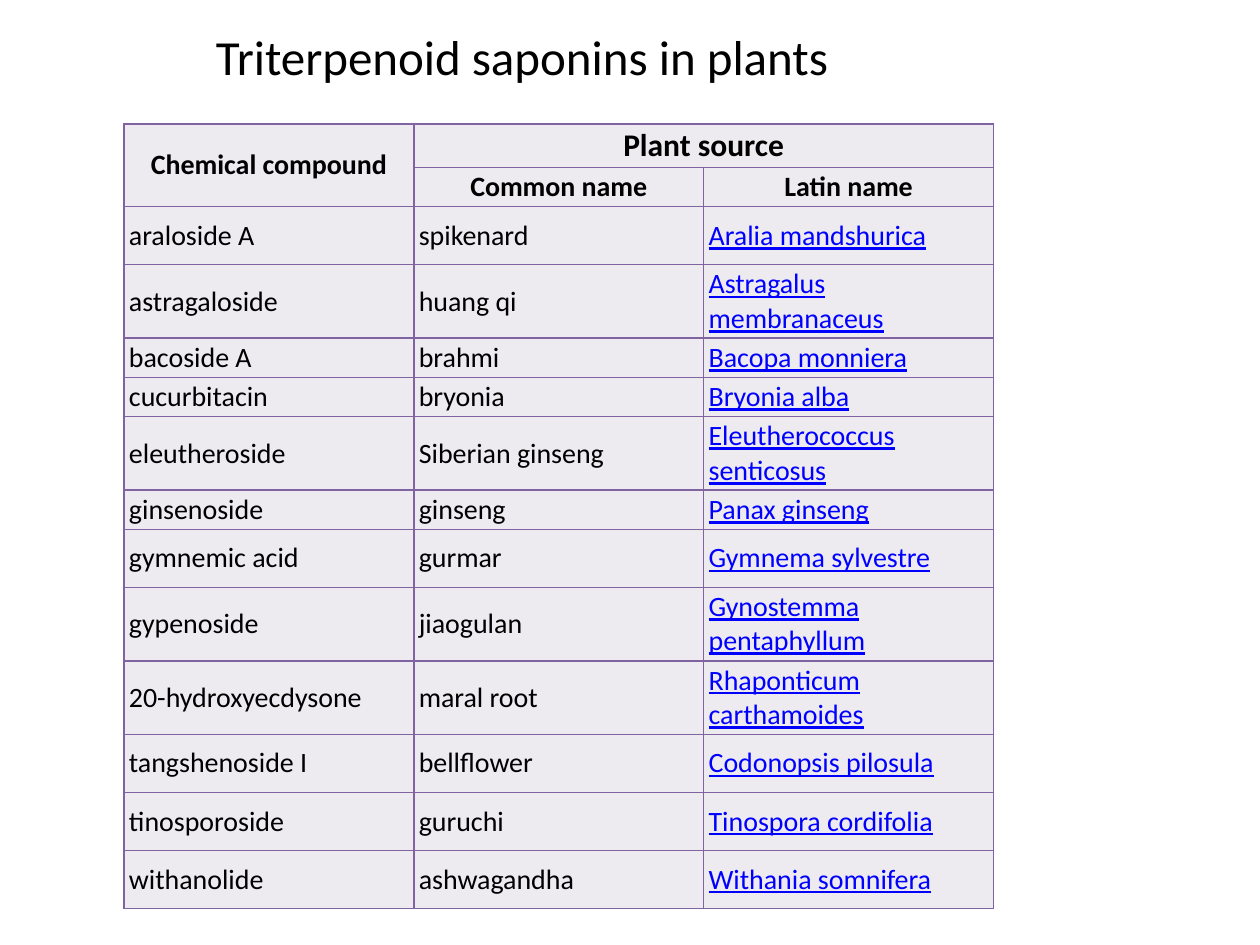
import dataclasses

import lxml.etree
import pptx
import pptx.dml.color
import pptx.enum.text
import pptx.oxml.ns
import pptx.util
from pptx.util import Cm, Pt

RGB = pptx.dml.color.RGBColor.from_string
ALIGN = pptx.enum.text.PP_ALIGN
ANCHOR = pptx.enum.text.MSO_ANCHOR


@dataclasses.dataclass(frozen=True)
class Theme:
    font: str = "Calibri"
    text: str = "000000"
    latin: str = "0000FF"
    fill: str = "EDEAF0"
    border: str = "8064A2"
    border_width: int = Pt(1)
    title_size: int = Pt(28)
    group_size: int = Pt(18)
    body_size: int = Pt(16)


THEME = Theme()

HEADERS = [
    ("Chemical compound", "Plant source", ""),
    ("", "Common name", "Latin name"),
]
PLANTS = [
    ("araloside A", "spikenard", "Aralia mandshurica"),
    ("astragaloside", "huang qi", "Astragalus membranaceus"),
    ("bacoside A", "brahmi", "Bacopa monniera"),
    ("cucurbitacin", "bryonia", "Bryonia alba"),
    ("eleutheroside", "Siberian ginseng", "Eleutherococcus senticosus"),
    ("ginsenoside", "ginseng", "Panax ginseng"),
    ("gymnemic acid", "gurmar", "Gymnema sylvestre"),
    ("gypenoside", "jiaogulan", "Gynostemma pentaphyllum"),
    ("20-hydroxyecdysone", "maral root", "Rhaponticum carthamoides"),
    ("tangshenoside I", "bellflower", "Codonopsis pilosula"),
    ("tinosporoside", "guruchi", "Tinospora cordifolia"),
    ("withanolide", "ashwagandha", "Withania somnifera"),
]
SHORT_ROW, TALL_ROW = Cm(0.64), Cm(1.17)
SHORT_COMPOUNDS = {"bacoside A", "cucurbitacin", "ginsenoside"}


def style_font(font, size, color, bold=False, underline=False):
    font.name = THEME.font
    font.size = size
    font.color.rgb = RGB(color)
    font.bold = bold
    font.underline = underline


def add_borders(cell):
    tc_pr = cell._tc.get_or_add_tcPr()
    qn = pptx.oxml.ns.qn
    for side in ("a:lnL", "a:lnR", "a:lnT", "a:lnB"):
        ln = lxml.etree.SubElement(tc_pr, qn(side), w=str(THEME.border_width))
        solid = lxml.etree.SubElement(ln, qn("a:solidFill"))
        lxml.etree.SubElement(solid, qn("a:srgbClr"), val=THEME.border)


def format_cell(cell):
    cell.margin_left = cell.margin_right = Cm(0.1)
    cell.margin_top = cell.margin_bottom = Cm(0.05)
    cell.vertical_anchor = ANCHOR.MIDDLE
    add_borders(cell)
    # The fill has to follow the borders in the cell properties
    cell.fill.solid()
    cell.fill.fore_color.rgb = RGB(THEME.fill)


def place_title(slide, text, left, top, width, height):
    title = slide.shapes.title
    title.left, title.top, title.width, title.height = left, top, width, height
    tf = title.text_frame
    tf.text = text
    tf.word_wrap = True
    tf.vertical_anchor = ANCHOR.TOP
    p = tf.paragraphs[0]
    p.alignment = ALIGN.LEFT
    style_font(p.font, THEME.title_size, THEME.text)


def add_plant_table(slide, left, top, width):
    rows = HEADERS + PLANTS
    heights = [SHORT_ROW if row in HEADERS or row[0] in SHORT_COMPOUNDS
               else TALL_ROW for row in rows]
    columns = len(rows[0])
    table = slide.shapes.add_table(
        len(rows), columns, left, top, width, sum(heights)).table
    table.first_row = table.horz_banding = False

    for r, (values, height) in enumerate(zip(rows, heights)):
        table.rows[r].height = height
        header = r < len(HEADERS)
        for c, value in enumerate(values):
            cell = table.cell(r, c)
            format_cell(cell)
            cell.text = value
            p = cell.text_frame.paragraphs[0]
            p.alignment = ALIGN.CENTER if header else ALIGN.LEFT
            latin = c == columns - 1 and not header
            size = THEME.group_size if (r, c) == (0, 1) else THEME.body_size
            style_font(p.font, size, THEME.latin if latin else THEME.text,
                       bold=header, underline=latin)

    # Header spans: compound over two rows, plant source over two columns
    table.cell(0, 0).merge(table.cell(1, 0))
    table.cell(0, 1).merge(table.cell(0, 2))


def main():
    prs = pptx.Presentation()
    prs.slide_width, prs.slide_height = Cm(25.4), Cm(19.05)
    slide = prs.slides.add_slide(prs.slide_layouts[5])
    place_title(slide, "Triterpenoid saponins in plants",
                Cm(4.1), Cm(0.4), Cm(17.6), Cm(1.45))
    add_plant_table(slide, Cm(2.5), Cm(2.5), Cm(17.53))
    prs.save("out.pptx")


if __name__ == "__main__":
    main()
